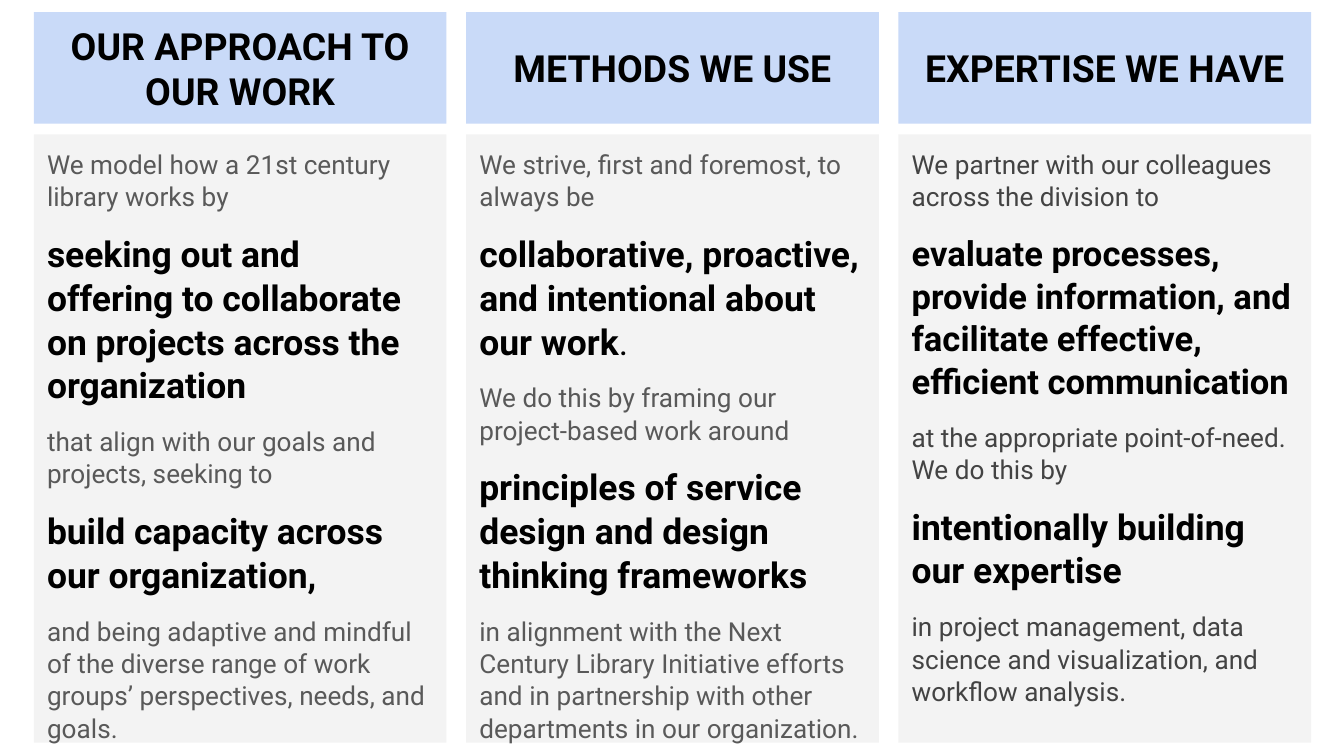
from pptx import Presentation
from pptx import util as u
from pptx.dml import color
from pptx.enum import shapes, text

COLORS = {
    "header": "C9DAF8",
    "panel": "F3F3F3",
    "strong": "000000",
    "gray": "595959",
    "dark_gray": "434343",
}
LEFT, PITCH, WIDTH = 0.64, 8.17, 7.8
HEADER_TOP, HEADER_HEIGHT = 0.23, 2.11
PANEL_TOP, PANEL_HEIGHT = 2.54, 11.5

COLUMNS = [
    {
        "title": "OUR APPROACH TO OUR WORK",
        "plain": "gray",
        "body": [
            ("We model how a 21st century library works by", None),
            ("seeking out and offering to collaborate on projects across the organization", 19),
            ("that align with our goals and projects, seeking to", None),
            ("build capacity across our organization,", 19),
            ("and being adaptive and mindful of the diverse range of work groups’ "
             "perspectives, needs, and goals.", None),
        ],
    },
    {
        "title": "METHODS WE USE",
        "plain": "gray",
        "body": [
            ("We strive, first and foremost, to always be", None),
            ("collaborative, proactive, and intentional about our work", 19, "."),
            ("We do this by framing our project-based work around", None),
            ("principles of service design and design thinking frameworks", 19),
            ("in alignment with the Next Century Library Initiative efforts and in "
             "partnership with other departments in our organization.", None),
        ],
    },
    {
        "title": "EXPERTISE WE HAVE",
        "plain": "dark_gray",
        "body": [
            ("We partner with our colleagues across the division to", None),
            ("evaluate processes, provide information, and facilitate effective, "
             "efficient communication", 18.5),
            ("at the appropriate point-of-need. We do this by", None),
            ("intentionally building our expertise", 19),
            ("in project management, data science and visualization, and workflow "
             "analysis.", None),
        ],
    },
]


def add_run(p, content, size=14, fill="strong", bold=False):
    """Add a formatted run to a paragraph."""
    r = p.add_run()
    r.text = content
    r.font.name = "Roboto"
    r.font.size = u.Pt(size)
    r.font.bold = bold
    r.font.color.rgb = color.RGBColor.from_string(COLORS[fill])


def add_block(s, left, top, height, fill, anchor):
    """Add a filled rectangle and return its text frame."""
    sp = s.shapes.add_shape(shapes.MSO_SHAPE.RECTANGLE,
                            u.Cm(left), u.Cm(top), u.Cm(WIDTH), u.Cm(height))
    sp.shadow.inherit = False
    sp.fill.solid()
    sp.fill.fore_color.rgb = color.RGBColor.from_string(COLORS[fill])
    sp.line.fill.background()
    tf = sp.text_frame
    tf.word_wrap = True
    tf.vertical_anchor = anchor
    tf.margin_left = tf.margin_right = tf.margin_top = tf.margin_bottom = u.Cm(0.25)
    return tf


def add_header(s, left, title):
    """Add a centred column heading."""
    tf = add_block(s, left, HEADER_TOP, HEADER_HEIGHT, "header", text.MSO_ANCHOR.MIDDLE)
    p = tf.paragraphs[0]
    p.alignment = text.PP_ALIGN.CENTER
    add_run(p, title, size=20, bold=True)


def add_panel(s, left, body, plain):
    """Add a column panel of plain and emphasised paragraphs."""
    tf = add_block(s, left, PANEL_TOP, PANEL_HEIGHT, "panel", text.MSO_ANCHOR.TOP)
    for i, (content, strong_size, *tail) in enumerate(body):
        p = tf.add_paragraph() if i else tf.paragraphs[0]
        p.alignment = text.PP_ALIGN.LEFT
        p.line_spacing = 1.03
        p.space_before = u.Pt(10 if i else 0)
        if strong_size:
            add_run(p, content, size=strong_size, bold=True)
        else:
            add_run(p, content, fill=plain)
        for ending in tail:
            add_run(p, ending, size=strong_size)


def main():
    """Build and save the slide."""
    prs = Presentation()
    prs.slide_width, prs.slide_height = u.Cm(25.4), u.Cm(14.29)
    s = prs.slides.add_slide(prs.slide_layouts[6])
    for i, column in enumerate(COLUMNS):
        left = LEFT + i * PITCH
        add_header(s, left, column["title"])
        add_panel(s, left, column["body"], column["plain"])
    prs.save("out.pptx")


if __name__ == "__main__":
    main()
